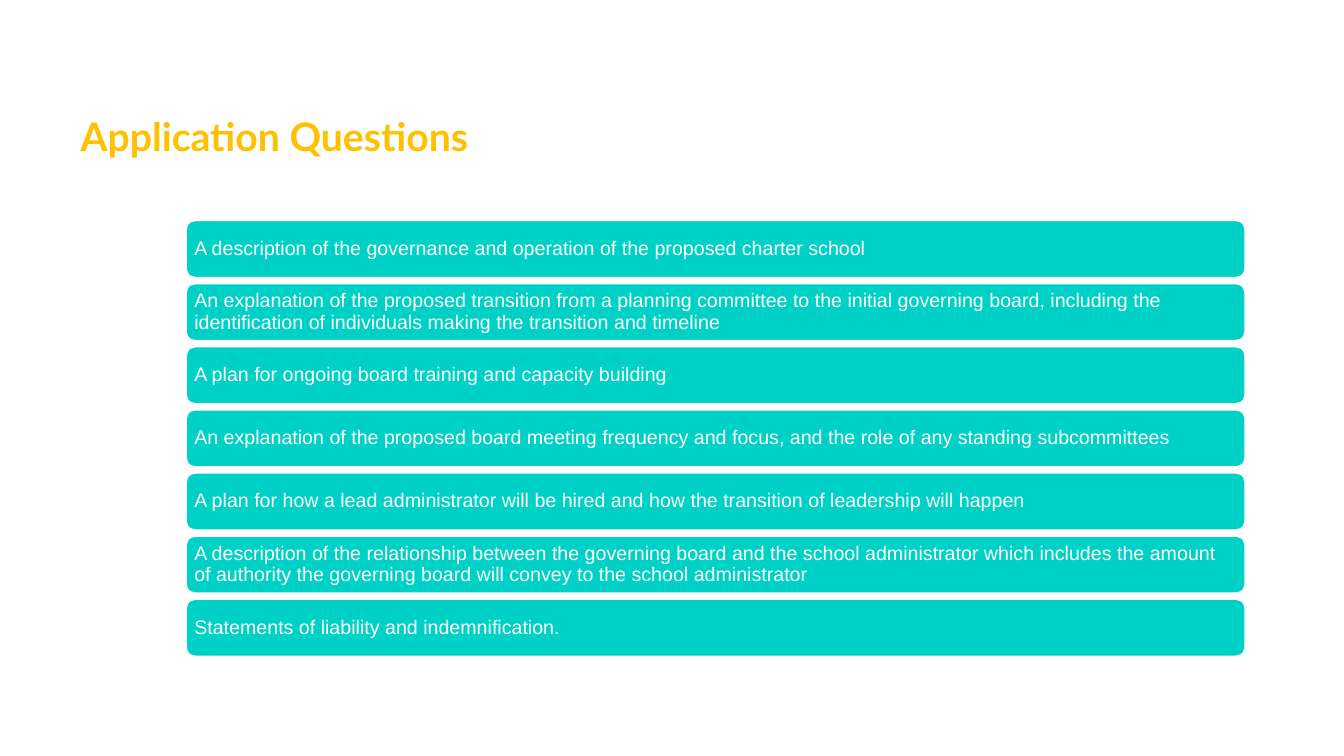
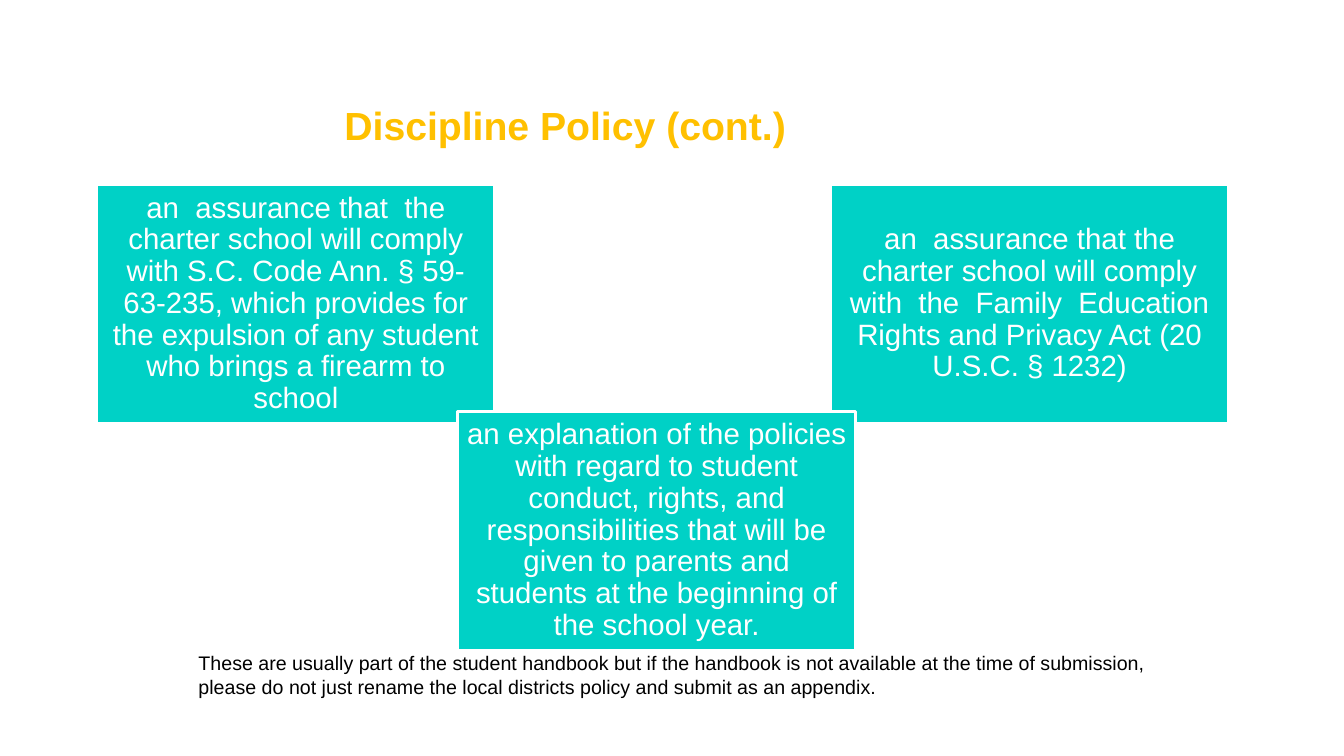
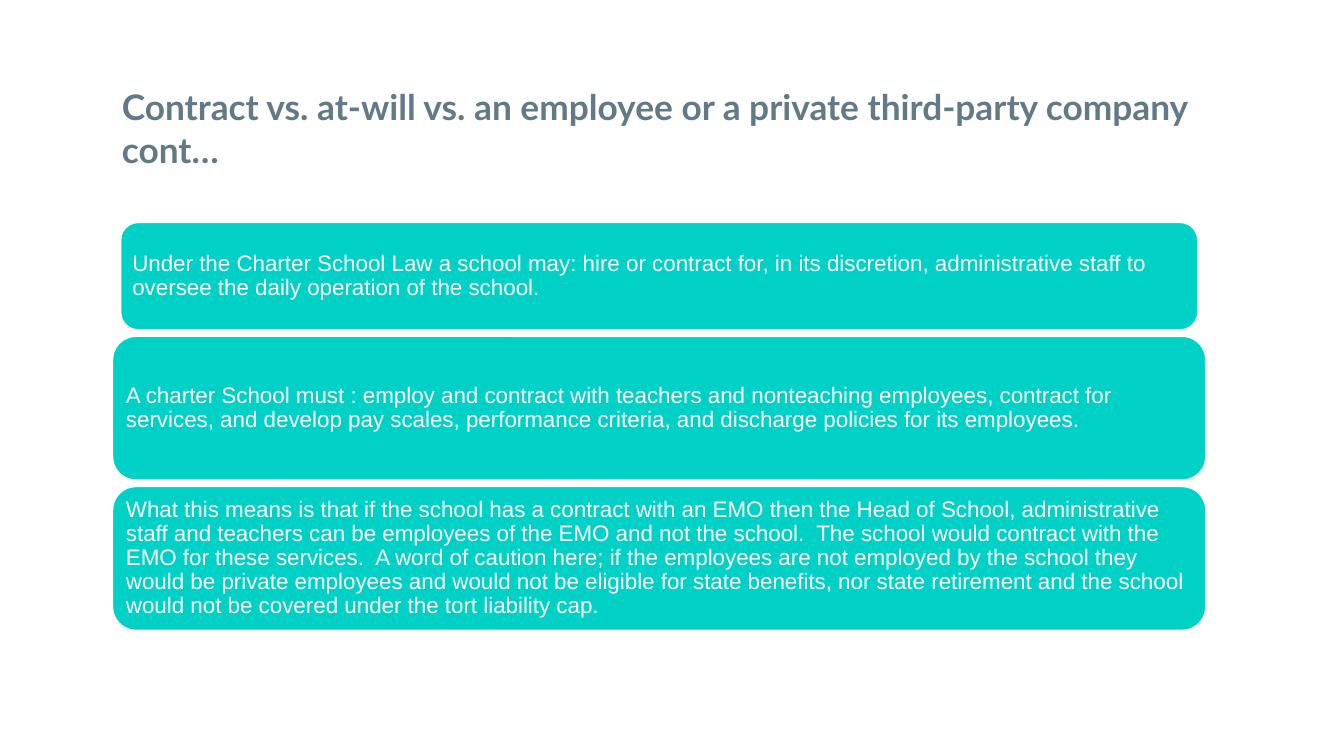
import dataclasses

import pptx
import pptx.dml.color
import pptx.enum.shapes
import pptx.enum.text
import pptx.util

SHAPE = pptx.enum.shapes.MSO_SHAPE
ALIGN = pptx.enum.text.PP_ALIGN
ANCHOR = pptx.enum.text.MSO_ANCHOR


@dataclasses.dataclass(frozen=True)
class Theme:
    white: str = "FFFFFF"
    black: str = "000000"
    teal: str = "00D1C6"
    gold: str = "FFC000"
    slate: str = "617A86"
    heading_font: str = "Lato"
    body_font: str = "Arial"
    title_size: float = 28
    long_title_size: float = 25.2
    box_size: float = 21
    card_size: float = 16
    small_size: float = 14
    outline: float = 2
    title_height: float = 12.4
    tight: float = 0.9


class Deck:
    """Positions and sizes are percentages of the slide's width and height."""

    def __init__(self, theme):
        self.theme = theme
        self.prs = pptx.Presentation()
        self.prs.slide_width = pptx.util.Inches(13.333)
        self.prs.slide_height = pptx.util.Inches(7.5)
        self.slide = None

    def new_slide(self):
        self.slide = self.prs.slides.add_slide(self.prs.slide_layouts[6])

    def place(self, x, y, w, h):
        sw, sh = self.prs.slide_width, self.prs.slide_height
        return [int(share * side / 100)
                for share, side in ((x, sw), (y, sh), (w, sw), (h, sh))]

    def add_text(self, sp, text, size, color, font, bold=False, align=ALIGN.LEFT,
                 anchor=ANCHOR.MIDDLE, inset=(0.1, 0.1), spacing=None):
        tf = sp.text_frame
        tf.word_wrap = True
        tf.vertical_anchor = anchor
        tf.margin_left = tf.margin_right = pptx.util.Inches(inset[0])
        tf.margin_top = tf.margin_bottom = pptx.util.Inches(inset[1])
        p = tf.paragraphs[0]
        p.alignment = align
        p.line_spacing = spacing
        r = p.add_run()
        r.text = text
        r.font.name = font
        r.font.size = pptx.util.Pt(size)
        r.font.bold = bold
        r.font.color.rgb = pptx.dml.color.RGBColor.from_string(color)

    def title(self, text, x, y, w, color, font, size, align=ALIGN.LEFT):
        sp = self.slide.shapes.add_textbox(
            *self.place(x, y, w, self.theme.title_height))
        self.add_text(sp, text, size, color, font, True, align, ANCHOR.BOTTOM)

    def note(self, text, x, y, w, h):
        t = self.theme
        sp = self.slide.shapes.add_textbox(*self.place(x, y, w, h))
        self.add_text(sp, text, t.small_size, t.black, t.body_font,
                      anchor=ANCHOR.TOP, inset=(0.1, 0.05))

    def panel(self, kind, text, x, y, w, h, size, inset, align=ALIGN.LEFT):
        t = self.theme
        sp = self.slide.shapes.add_shape(kind, *self.place(x, y, w, h))
        sp.shadow.inherit = False
        sp.fill.solid()
        sp.fill.fore_color.rgb = pptx.dml.color.RGBColor.from_string(t.teal)
        sp.line.color.rgb = pptx.dml.color.RGBColor.from_string(t.white)
        sp.line.width = pptx.util.Pt(t.outline)
        self.add_text(sp, text, size, t.white, t.body_font, align=align,
                      inset=(inset, inset), spacing=t.tight)

    def stack(self, cards, center, top, gap, size, inset):
        for w, h, text in cards:
            self.panel(SHAPE.ROUNDED_RECTANGLE, text, center - w / 2, top,
                       w, h, size, inset)
            top += h + gap


QUESTIONS = [
    "A description of the governance and operation of the proposed charter school",
    "An explanation of the proposed transition from a planning committee to the "
    "initial governing board, including the identification of individuals making "
    "the transition and timeline",
    "A plan for ongoing board training and capacity building",
    "An explanation of the proposed board meeting frequency and focus, and the "
    "role of any standing subcommittees",
    "A plan for how a lead administrator will be hired and how the transition of "
    "leadership will happen",
    "A description of the relationship between the governing board and the school "
    "administrator which includes the amount of authority the governing board will "
    "convey to the school administrator",
    "Statements of liability and indemnification.",
]

POLICIES = [
    (7.2, 24.4,
     "an  assurance that  the charter school will comply with S.C. Code Ann. "
     "§ 59-63-235, which provides for the expulsion of any student who brings a "
     "firearm to school"),
    (61.8, 24.4,
     "an  assurance that the charter school will comply with  the  Family  "
     "Education Rights and Privacy Act (20 U.S.C. § 1232)"),
    (34.05, 54.4,
     "an explanation of the policies with regard to student conduct, rights, and "
     "responsibilities that will be given to parents and students at the beginning "
     "of the school year."),
]

STAFFING = [
    (80.25, 14.4,
     "Under the Charter School Law a school may: hire or contract for, in its "
     "discretion, administrative staff to oversee the daily operation of the "
     "school."),
    (81.45, 19.2,
     "A charter School must : employ and contract with teachers and nonteaching "
     "employees, contract for services, and develop pay scales, performance "
     "criteria, and discharge policies for its employees."),
    (81.45, 19.2,
     "What this means is that if the school has a contract with an EMO then the "
     "Head of School, administrative staff and teachers can be employees of the "
     "EMO and not the school.  The school would contract with the EMO for these "
     "services.  A word of caution here; if the employees are not employed by the "
     "school they would be private employees and would not be eligible for state "
     "benefits, nor state retirement and the school would not be covered under the "
     "tort liability cap."),
]


def application_questions(deck):
    t = deck.theme
    deck.new_slide()
    deck.title("Application Questions", 5.25, 10, 57.7, t.gold,
               t.heading_font, t.title_size)
    deck.stack([(78.9, 7.73, text) for text in QUESTIONS],
               center=53.25, top=29.07, gap=0.62, size=t.small_size, inset=0.06)


def discipline_policy(deck):
    t = deck.theme
    deck.new_slide()
    deck.title("Discipline Policy (cont.)", 13.2, 8.53, 57.7, t.gold,
               t.body_font, t.title_size, ALIGN.CENTER)
    for x, y, text in POLICIES:
        deck.panel(SHAPE.RECTANGLE, text, x, y, 29.63, 31.6, t.box_size, 0.09,
                   ALIGN.CENTER)
    deck.note("These are usually part of the student handbook but if the handbook "
              "is not available at the time of submission, please do not just "
              "rename the local districts policy and submit as an appendix.",
              14.03, 85.47, 72, 10.8)


def contract_or_at_will(deck):
    t = deck.theme
    deck.new_slide()
    deck.title("Contract vs. at-will vs. an employee or a private third-party "
               "company cont…", 8.33, 11.47, 85.7, t.slate, t.heading_font,
               t.long_title_size)
    deck.stack(STAFFING, center=49.05, top=29.33, gap=0.67,
               size=t.card_size, inset=0.07)


def main():
    deck = Deck(Theme())
    application_questions(deck)
    discipline_policy(deck)
    contract_or_at_will(deck)
    deck.prs.save("out.pptx")


if __name__ == "__main__":
    main()
